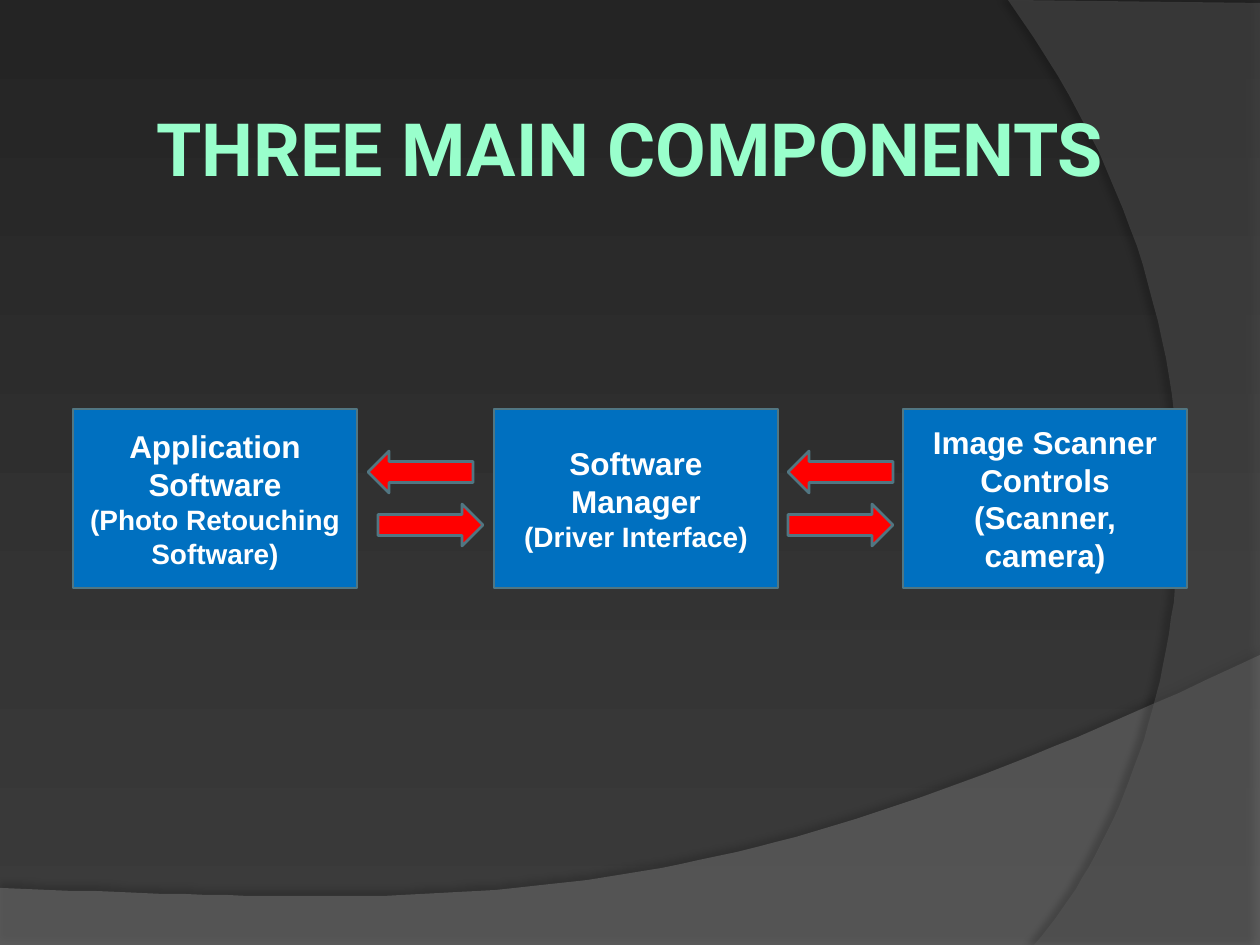
from lxml import etree
from pptx import Presentation
from pptx.dml.color import RGBColor
from pptx.enum.shapes import MSO_SHAPE
from pptx.enum.text import MSO_ANCHOR, PP_ALIGN
from pptx.oxml.ns import qn
from pptx.util import Emu, Pt

SCALE = 914400 / 126
COLORS = {
    "top": "242424", "bottom": "3B3B3B", "wave": "7F7F7F", "arc": "5E5E5E",
    "box": "0070C0", "arrow": "FF0000", "line": "517682",
    "text": "FFFFFF", "title": "99FFCC",
}


def px(*values):
    return [Emu(round(v * SCALE)) for v in values]


def add_text(tf, text, size, font, color, first):
    p = tf.paragraphs[0] if first else tf.add_paragraph()
    p.alignment = PP_ALIGN.CENTER
    r = p.add_run()
    r.text = text
    r.font.size = Pt(size)
    r.font.name = font
    r.font.bold = True
    r.font.color.rgb = RGBColor.from_string(COLORS[color])


prs = Presentation()
prs.slide_width, prs.slide_height = px(1260, 945)
s = prs.slides.add_slide(prs.slide_layouts[6])

bg = s.background.fill
bg.gradient()
bg.gradient_angle = 270
for stop, name in zip(bg.gradient_stops, ("top", "bottom")):
    stop.color.rgb = RGBColor.from_string(COLORS[name])

swooshes = [
    ("wave", 45, [(0, 888), (0, 946), (1260, 946)],
     [(1260, 655), (704, 919), (493, 906), (0, 888)], (35, 3.5, 270)),
    ("arc", 40, [(1260, 3), (1260, 945)],
     [(1034, 945), (1178, 780), (1283, 378), (1008, 0)], (45, 4, 180)),
]
for name, alpha, corners, curve, (shade, dist, angle) in swooshes:
    points = list(corners)
    for i in range(61):
        t = i / 60
        weights = ((1 - t) ** 3, 3 * t * (1 - t) ** 2, 3 * t * t * (1 - t), t ** 3)
        points.append(tuple(sum(w * c[k] for w, c in zip(weights, curve)) for k in (0, 1)))
    fb = s.shapes.build_freeform(*points[0], scale=SCALE)
    fb.add_line_segments(points[1:], close=True)
    sp = fb.convert_to_shape()
    sp.fill.solid()
    sp.fill.fore_color.rgb = RGBColor.from_string(COLORS[name])
    sp.line.fill.background()
    sp.shadow.inherit = False
    spPr = sp._element.spPr
    clr = spPr.find(qn("a:solidFill")).find(qn("a:srgbClr"))
    etree.SubElement(clr, qn("a:alpha"), val=str(alpha * 1000))
    shadow = etree.SubElement(
        spPr.find(qn("a:effectLst")), qn("a:outerShdw"), blurRad=str(Pt(4)),
        dist=str(Pt(dist)), dir=str(angle * 60000), algn="ctr", rotWithShape="0")
    clr = etree.SubElement(shadow, qn("a:srgbClr"), val="000000")
    etree.SubElement(clr, qn("a:alpha"), val=str(shade * 1000))

boxes = [
    (73, [("Application Software", 18), ("(Photo Retouching Software)", 16)]),
    (494, [("Software Manager", 18), ("(Driver Interface)", 16)]),
    (903, [("Image Scanner Controls", 18), ("(Scanner, camera)", 18)]),
]
arrows = [(368, 451, 180), (788, 451, 180), (378, 504, 0), (788, 504, 0)]
shapes = [(MSO_SHAPE.RECTANGLE, "box", (x, 409, 284, 179), 0, lines) for x, lines in boxes]
shapes += [(MSO_SHAPE.RIGHT_ARROW, "arrow", (x, y, 105, 42), rot, []) for x, y, rot in arrows]
for kind, name, rect, rot, lines in shapes:
    sp = s.shapes.add_shape(kind, *px(*rect))
    sp.rotation = rot
    sp.shadow.inherit = False
    sp.fill.solid()
    sp.fill.fore_color.rgb = RGBColor.from_string(COLORS[name])
    sp.line.color.rgb = RGBColor.from_string(COLORS["line"])
    sp.line.width = Pt(1.5)
    tf = sp.text_frame
    tf.word_wrap = True
    tf.vertical_anchor = MSO_ANCHOR.MIDDLE
    for i, (text, size) in enumerate(lines):
        add_text(tf, text, size, "Arial", "text", i == 0)

tf = s.shapes.add_textbox(*px(63, 63, 1134, 168)).text_frame
tf.word_wrap = True
tf.vertical_anchor = MSO_ANCHOR.MIDDLE
tf.margin_left, tf.margin_top, tf.margin_right, tf.margin_bottom = px(6, 6, 6, 6)
add_text(tf, "THREE MAIN COMPONENTS", 42, "Roboto", "title", True)

prs.save("out.pptx")
